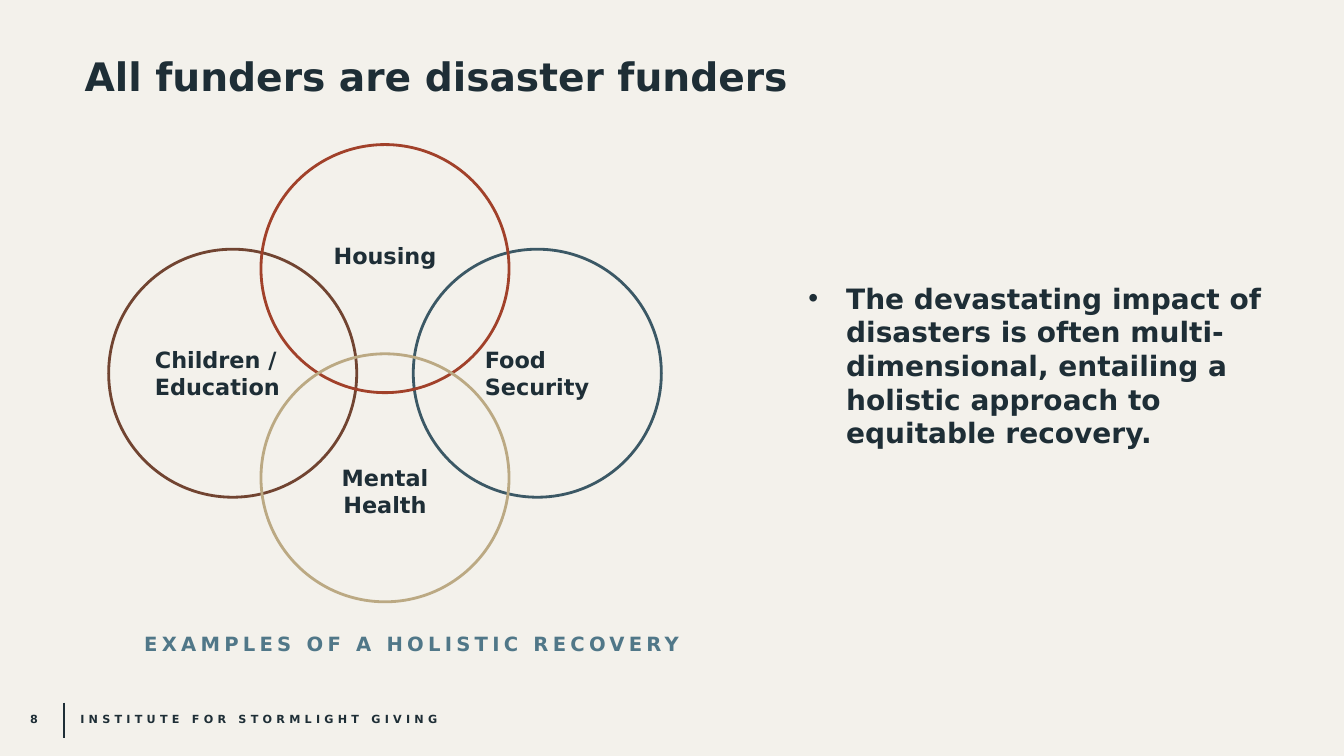
from pptx import Presentation
from pptx.dml.color import RGBColor
from pptx.enum.shapes import MSO_CONNECTOR, MSO_SHAPE
from pptx.enum.text import MSO_ANCHOR, MSO_AUTO_SIZE, PP_ALIGN
from pptx.oxml.ns import qn
from pptx.util import Pt
from lxml.etree import SubElement

FONT = "DejaVu Sans"
COLORS = {
    "background": "F3F1EB",
    "ink": "1E2E36",
    "caption": "507788",
    "food": "3B5865",
    "children": "714431",
    "housing": "A1412A",
    "health": "BBA983",
}
VENN_CENTER = (275, 266.6)
VENN_OFFSET = (108.8, 74.7)
CIRCLE_SIZE = 177.2
SIDE_INSET, EDGE_INSET = 7.2, 3.6
LABEL_LINE = 18.6

# Label, colour, steps from the centre, alignment, extra left, top and bottom insets
CIRCLES = [
    ("Food Security", "food", (1, 0), PP_ALIGN.LEFT, (18, 0, 0)),
    ("Children / Education", "children", (-1, 0), PP_ALIGN.LEFT, (0, 0, 0)),
    ("Housing", "housing", (0, -1), PP_ALIGN.CENTER, (0, 0, LABEL_LINE)),
    ("Mental Health", "health", (0, 1), PP_ALIGN.CENTER, (0, LABEL_LINE, 0)),
]


def color(name):
    return RGBColor.from_string(COLORS[name])


def place(shape, left, top, width, height):
    shape.left, shape.top = Pt(left), Pt(top)
    shape.width, shape.height = Pt(width), Pt(height)


def set_insets(text_frame, left=0, top=0, right=0, bottom=0):
    text_frame.margin_left, text_frame.margin_top = Pt(left), Pt(top)
    text_frame.margin_right, text_frame.margin_bottom = Pt(right), Pt(bottom)


def write(text_frame, text, size, color_name="ink", align=PP_ALIGN.LEFT,
          anchor=MSO_ANCHOR.TOP, line_spacing=1.0, letter_spacing=0):
    """Fill a frame with one bold paragraph; letter spacing is in points."""
    text_frame.text = text
    text_frame.word_wrap = True
    text_frame.auto_size = MSO_AUTO_SIZE.NONE
    text_frame.vertical_anchor = anchor
    paragraph = text_frame.paragraphs[0]
    paragraph.alignment = align
    paragraph.line_spacing = line_spacing
    paragraph.space_before = Pt(0)
    run = paragraph.runs[0]
    run.font.name = FONT
    run.font.size = Pt(size)
    run.font.bold = True
    run.font.color.rgb = color(color_name)
    if letter_spacing:
        run.font._element.set("spc", str(letter_spacing * 100))


def add_label(slide, text, box, size, **style):
    label = slide.shapes.add_textbox(*map(Pt, box))
    set_insets(label.text_frame)
    write(label.text_frame, text, size, **style)


def add_circle(slide, label, color_name, steps, align, extra_insets):
    left, top = (center + step * offset - CIRCLE_SIZE / 2
                 for center, step, offset in zip(VENN_CENTER, steps, VENN_OFFSET))
    circle = slide.shapes.add_shape(
        MSO_SHAPE.OVAL, Pt(left), Pt(top), Pt(CIRCLE_SIZE), Pt(CIRCLE_SIZE))
    circle.shadow.inherit = False
    circle.fill.background()
    circle.line.color.rgb = color(color_name)
    circle.line.width = Pt(2)
    extra_left, extra_top, extra_bottom = extra_insets
    set_insets(circle.text_frame, SIDE_INSET + extra_left, EDGE_INSET + extra_top,
               SIDE_INSET, EDGE_INSET + extra_bottom)
    write(circle.text_frame, label, 16, align=align, anchor=MSO_ANCHOR.MIDDLE)


def add_title(slide, text):
    title = slide.shapes.title
    place(title, 53.3, 39.6, 851, 33.1)
    write(title.text_frame, text, 28, anchor=MSO_ANCHOR.MIDDLE, line_spacing=0.9)


def add_statement(slide, text):
    body = slide.placeholders[1]
    place(body, 577.4, 200.9, 327.6, 108)
    set_insets(body.text_frame)
    properties = body.text_frame.paragraphs[0]._p.get_or_add_pPr()
    properties.set("marL", "0")
    properties.set("indent", "0")
    SubElement(properties, qn("a:buNone"))
    write(body.text_frame, text, 20)


def add_footer(slide):
    add_label(slide, "8", (21.6, 509, 31.7, 9.4), 8)
    divider = slide.shapes.add_connector(
        MSO_CONNECTOR.STRAIGHT, Pt(45.9), Pt(501.8), Pt(45.9), Pt(527))
    divider.line.color.rgb = color("ink")
    divider.line.width = Pt(1.25)
    SubElement(divider._element.spPr, qn("a:effectLst"))
    add_label(slide, "INSTITUTE FOR STORMLIGHT GIVING", (57.4, 509, 330.5, 9.4), 8,
              letter_spacing=3)


def main():
    presentation = Presentation()
    presentation.slide_width, presentation.slide_height = Pt(960), Pt(540)
    slide = presentation.slides.add_slide(presentation.slide_layouts[1])
    slide.background.fill.solid()
    slide.background.fill.fore_color.rgb = color("background")

    add_title(slide, "All funders are disaster funders")
    add_statement(slide, "The devastating impact of disasters is often multi-dimensional, "
                         "entailing a holistic approach to equitable recovery.")
    for circle in CIRCLES:
        add_circle(slide, *circle)
    add_label(slide, "EXAMPLES OF A HOLISTIC RECOVERY", (53.3, 453.6, 481.7, 15.1), 14,
              color_name="caption", align=PP_ALIGN.CENTER, line_spacing=0.9,
              letter_spacing=3)
    add_footer(slide)
    presentation.save("out.pptx")


if __name__ == "__main__":
    main()
